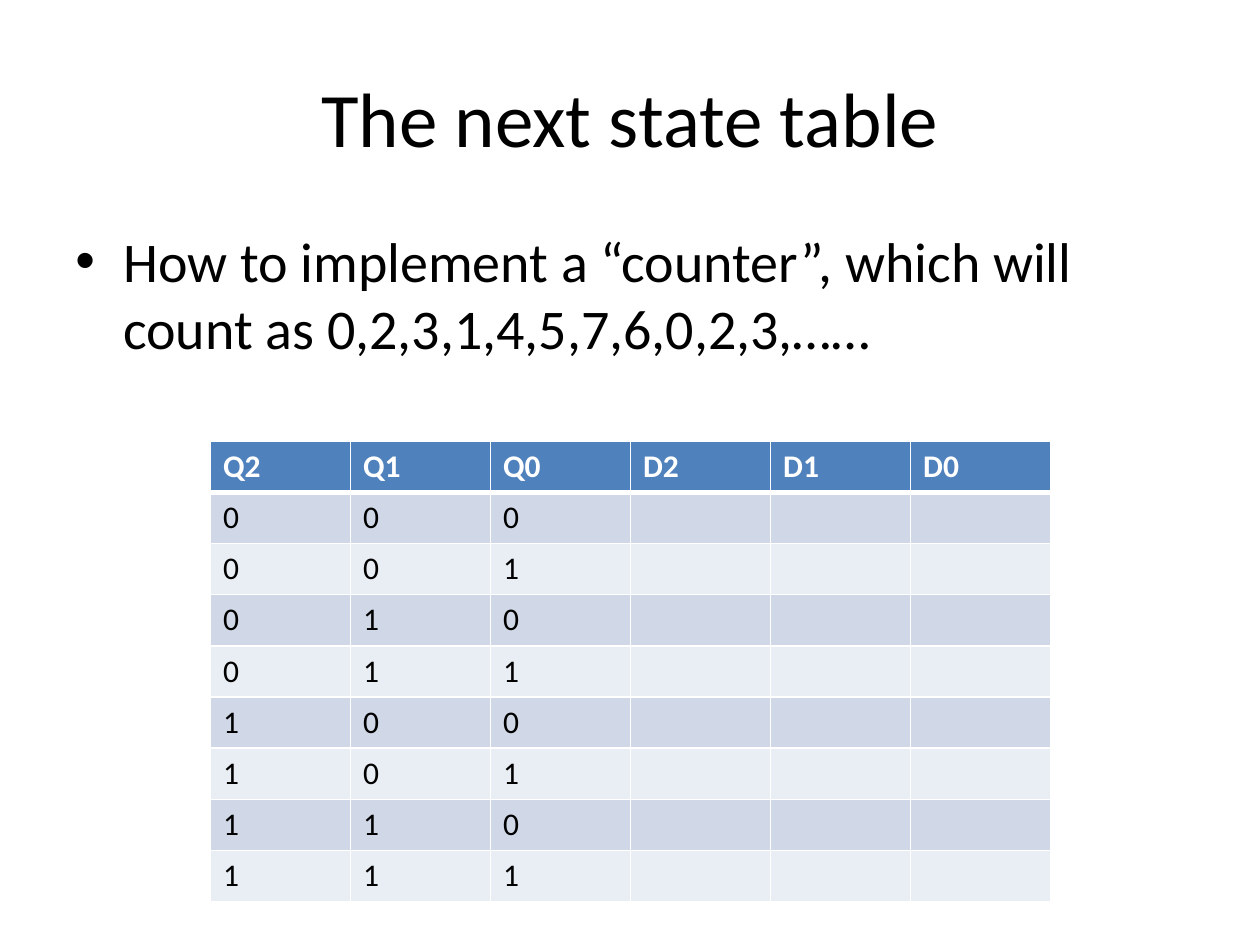
from dataclasses import dataclass
from itertools import product

from lxml import etree
from pptx import Presentation
from pptx.dml.color import RGBColor
from pptx.enum.text import MSO_ANCHOR, PP_ALIGN
from pptx.oxml.ns import qn
from pptx.util import Inches, Pt

CENTER, LEFT = PP_ALIGN.CENTER, PP_ALIGN.LEFT
MIDDLE, TOP = MSO_ANCHOR.MIDDLE, MSO_ANCHOR.TOP
BLACK, WHITE = "000000", "FFFFFF"
BORDER_SIDES = ("L", "R", "T", "B")


@dataclass
class RowStyle:
    fill: str
    color: str
    bold: bool
    top: float = 1
    bottom: float = 1


HEADER = RowStyle("4F81BD", WHITE, True, bottom=3)
FIRST = RowStyle("D0D8E8", BLACK, False, top=3)
ODD = RowStyle("D0D8E8", BLACK, False)
EVEN = RowStyle("E9EDF4", BLACK, False)


def rgb(value: str) -> RGBColor:
    return RGBColor.from_string(value)


def set_font(font, size: float, color: str, bold: bool = False) -> None:
    for name, value in {"name": "Calibri", "size": Pt(size), "bold": bold}.items():
        setattr(font, name, value)
    font.color.rgb = rgb(color)


def place(sp, left: float, top: float, width: float, height: float) -> None:
    box = {"left": left, "top": top, "width": width, "height": height}
    for name, value in box.items():
        setattr(sp, name, Inches(value))


def write(sp, text: str, size: float, align, anchor) -> None:
    tf = sp.text_frame
    tf.word_wrap = True
    tf.vertical_anchor = anchor
    p = tf.paragraphs[0]
    p.alignment = align
    r = p.add_run()
    r.text = text
    set_font(r.font, size, BLACK)


def add_bullet(p, indent: float) -> None:
    pPr = p._p.get_or_add_pPr()
    pPr.set("marL", str(Inches(indent)))
    pPr.set("indent", str(-Inches(indent)))
    before = etree.SubElement(pPr, qn("a:spcBef"))
    etree.SubElement(before, qn("a:spcPct"), val="20000")
    etree.SubElement(pPr, qn("a:buFont"), typeface="Arial")
    etree.SubElement(pPr, qn("a:buChar"), char="•")


def set_borders(cell, style: RowStyle) -> None:
    tcPr = cell._tc.get_or_add_tcPr()
    widths = {"T": style.top, "B": style.bottom}
    for i, side in enumerate(BORDER_SIDES):
        ln = etree.Element(qn(f"a:ln{side}"), w=str(Pt(widths.get(side, 1))))
        fill = etree.SubElement(ln, qn("a:solidFill"))
        etree.SubElement(fill, qn("a:srgbClr"), val=WHITE)
        tcPr.insert(i, ln)


def fill_cell(cell, text: str, style: RowStyle) -> None:
    p = cell.text_frame.paragraphs[0]
    if text:
        r = p.add_run()
        r.text = text
        set_font(r.font, 18, style.color, style.bold)
    cell.fill.solid()
    cell.fill.fore_color.rgb = rgb(style.fill)
    set_borders(cell, style)


def row_style(row: int) -> RowStyle:
    if row < 2:
        return (HEADER, FIRST)[row]
    return ODD if row % 2 else EVEN


def add_state_table(s) -> None:
    # All three-bit present states; the next-state inputs stay blank
    rows = [("Q2", "Q1", "Q0", "D2", "D1", "D0")]
    rows += [bits + ("",) * 3 for bits in product("01", repeat=3)]
    table = s.shapes.add_table(
        len(rows), len(rows[0]),
        Inches(1.67), Inches(3.5), Inches(6.67), Inches(3.66),
    ).table
    for i, values in enumerate(rows):
        for j, text in enumerate(values):
            fill_cell(table.cell(i, j), text, row_style(i))


def main() -> None:
    prs = Presentation()
    prs.slide_width, prs.slide_height = Inches(10), Inches(7.5)
    s = prs.slides.add_slide(prs.slide_layouts[5])

    # Title
    title = s.shapes.title
    place(title, 0.5, 0.3, 9, 1.25)
    write(title, "The next state table", 44, CENTER, MIDDLE)

    # Next state table
    add_state_table(s)

    # Question
    question = s.shapes.add_textbox(0, 0, 0, 0)
    place(question, 0.5, 1.75, 9, 1.17)
    write(question, "How to implement a “counter”, which will count as "
          "0,2,3,1,4,5,7,6,0,2,3,……", 32, LEFT, TOP)
    add_bullet(question.text_frame.paragraphs[0], 0.38)

    prs.save("out.pptx")


if __name__ == "__main__":
    main()
